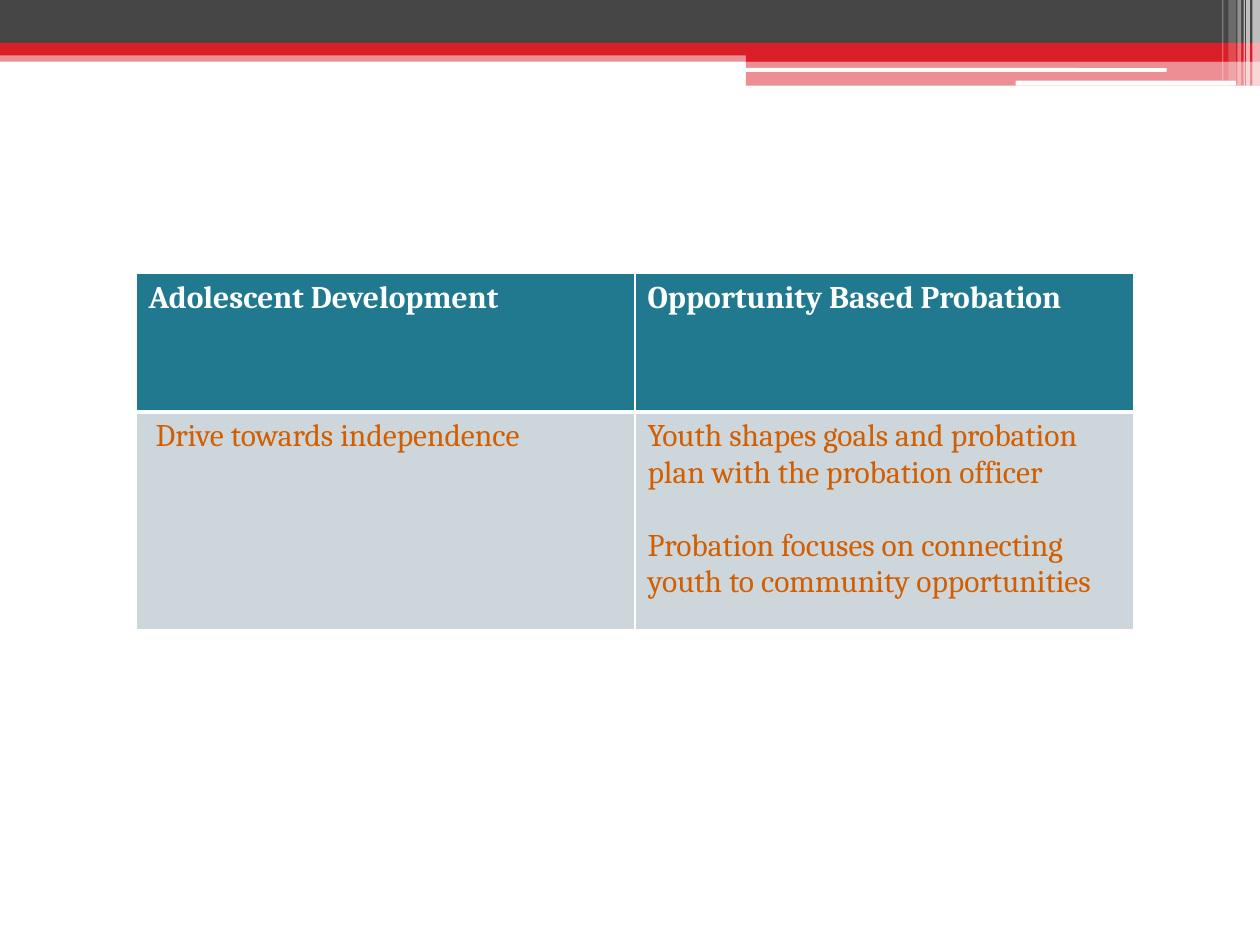
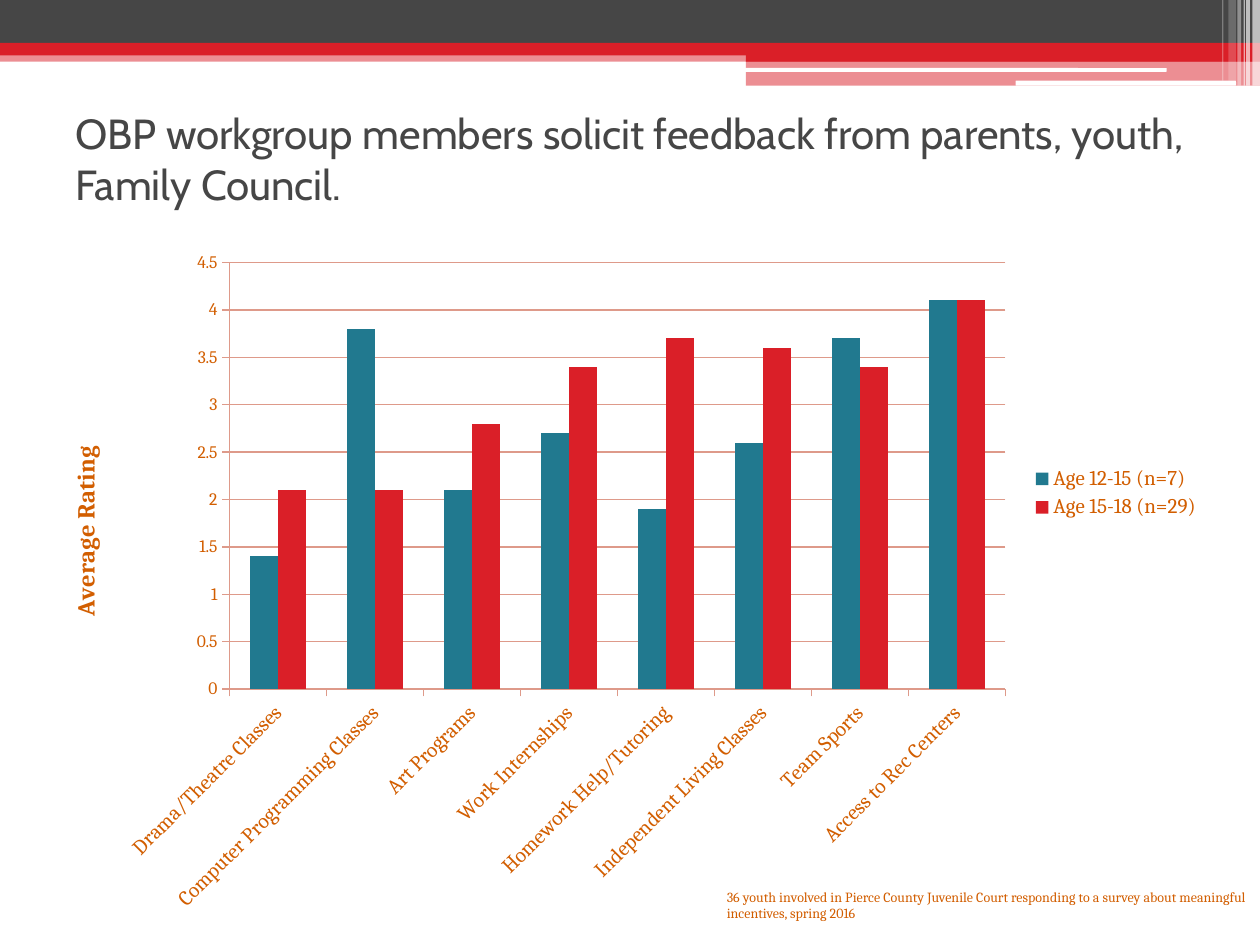
"""Build two probation slides: a comparison table and a survey chart."""
from lxml.etree import SubElement
from pptx import Presentation
from pptx.chart.data import CategoryChartData
from pptx.dml.color import RGBColor
from pptx.enum.chart import XL_CHART_TYPE, XL_LEGEND_POSITION, XL_TICK_MARK
from pptx.enum.shapes import MSO_SHAPE
from pptx.enum.text import MSO_ANCHOR
from pptx.oxml import parse_xml
from pptx.oxml.ns import nsdecls, qn
from pptx.util import Inches, Pt

RED = RGBColor(0xDA, 0x1F, 0x28)
CHARCOAL = RGBColor(0x46, 0x46, 0x46)
WHITE = RGBColor(0xFF, 0xFF, 0xFF)
TEAL = RGBColor(0x21, 0x79, 0x8F)
PALE = RGBColor(0xCD, 0xD7, 0xDB)
ORANGE = RGBColor(0xD2, 0x5E, 0x00)
SALMON = RGBColor(0xDE, 0x9A, 0x8A)

TITLE = {"name": "Cabin", "size": Pt(24), "color": CHARCOAL}
HEADING = {"name": "Cambria", "size": Pt(18), "color": WHITE, "bold": True}
BODY = {"name": "Cambria", "size": Pt(18), "color": ORANGE, "bold": False}
NOTE = {"name": "Cambria", "size": Pt(8), "color": ORANGE}
CHART_TEXT = {"name": "Cambria", "size": Pt(10), "color": ORANGE}
LABEL = CHART_TEXT | {"size": Pt(12)}
AXIS_TITLE = CHART_TEXT | {"size": Pt(14), "bold": True}

BANDS = [
    (0, 0.4, 10, 0.09, RED, 50),
    (0, 0, 10, 0.34, CHARCOAL, 100),
    (0, 0.34, 10, 0.1, RED, 100),
    (5.92, 0.39, 4.08, 0.1, RED, 100),
    (5.92, 0.48, 4.08, 0.2, RED, 50),
    (5.91, 0.54, 3.35, 0.03, WHITE, 100),
    (8.06, 0.64, 1.75, 0.04, WHITE, 100),
    (9.94, 0, 0.06, 0.68, WHITE, 65),
    (9.89, 0, 0.03, 0.68, WHITE, 65),
    (9.87, 0, 0.01, 0.68, WHITE, 60),
    (9.82, 0, 0.03, 0.68, WHITE, 40),
    (9.75, 0, 0.06, 0.64, WHITE, 20),
    (9.7, 0, 0.01, 0.64, WHITE, 30),
]


def apply_format(font, values):
    for attribute, value in values.items():
        if attribute == "color":
            font.color.rgb = value
        else:
            setattr(font, attribute, value)


def place(element, index, **fractions):
    for old in element.findall(qn("c:layout")):
        element.remove(old)
    layout = parse_xml(f"<c:layout {nsdecls('c')}><c:manualLayout/></c:layout>")
    if "h" in fractions:
        SubElement(layout[0], qn("c:layoutTarget"), val="inner")
    for tag in ("xMode", "yMode"):
        SubElement(layout[0], qn(f"c:{tag}"), val="edge")
    for tag, value in fractions.items():
        SubElement(layout[0], qn(f"c:{tag}"), val=str(value))
    element.insert(index, layout)


prs = Presentation()
prs.slide_width, prs.slide_height = Inches(10), Inches(7.5)
comparison, survey = [prs.slides.add_slide(prs.slide_layouts[6]) for _ in range(2)]

for slide in (comparison, survey):
    for left, top, width, height, color, opacity in BANDS:
        rounded = color == WHITE and opacity == 100
        preset = MSO_SHAPE.ROUNDED_RECTANGLE if rounded else MSO_SHAPE.RECTANGLE
        band = slide.shapes.add_shape(
            preset, Inches(left), Inches(top), Inches(width), Inches(height))
        band.shadow.inherit = False
        band.fill.solid()
        band.fill.fore_color.rgb = color
        band.line.fill.background()
        if opacity < 100:
            tint = next(band._element.spPr.iter(qn("a:srgbClr")))
            SubElement(tint, qn("a:alpha"), val=str(opacity * 1000))

rows = [
    (1.1, TEAL, HEADING, 3,
     [["Adolescent Development"], ["Opportunity Based Probation"]]),
    (1.73, PALE, BODY, 1,
     [[" Drive towards independence"],
      ["Youth shapes goals and probation plan with the probation officer",
       "Probation focuses on connecting youth to community opportunities"]]),
]
table = comparison.shapes.add_table(
    2, 2, Inches(1.08), Inches(2.17), Inches(7.92), Inches(2.83)).table
table.horz_banding = False
for row, (height, fill, text_format, bottom, texts) in enumerate(rows):
    table.rows[row].height = Inches(height)
    top = rows[row - 1][3] if row else 1
    for column, paragraphs in enumerate(texts):
        cell = table.cell(row, column)
        cell.fill.solid()
        cell.fill.fore_color.rgb = fill
        edges = {"lnL": 1, "lnR": 1, "lnT": top, "lnB": bottom}
        for position, (edge, weight) in enumerate(edges.items()):
            cell._tc.tcPr.insert(position, parse_xml(
                f'<a:{edge} {nsdecls("a")} w="{Pt(weight)}"><a:solidFill>'
                f'<a:srgbClr val="{WHITE}"/></a:solidFill></a:{edge}>'))
        for number, text in enumerate(paragraphs):
            frame = cell.text_frame
            paragraph = frame.add_paragraph() if number else frame.paragraphs[0]
            paragraph.space_before = Pt(21 * number)
            run = paragraph.add_run()
            run.text = text
            apply_format(run.font, text_format)

ratings = CategoryChartData()
ratings.categories = [
    "Drama/Theatre Classes", "Computer Programming Classes", "Art Programs",
    "Work Internships", "Homework Help/Tutoring", "Independent Living Classes",
    "Team Sports", "Access to Rec Centers"]
ratings.add_series("Age 12-15 (n=7)", [1.4, 3.8, 2.1, 2.7, 1.9, 2.6, 3.7, 4.1])
ratings.add_series("Age 15-18 (n=29)", [2.1, 2.1, 2.8, 3.4, 3.7, 3.6, 3.4, 4.1])
chart = survey.shapes.add_chart(
    XL_CHART_TYPE.COLUMN_CLUSTERED, Inches(0.33), Inches(1.92),
    Inches(9.33), Inches(5.46), ratings).chart
apply_format(chart.font, CHART_TEXT)
chart.has_title = False

plot = chart.plots[0]
plot.gap_width, plot.overlap, plot.vary_by_categories = 150, 0, False
for series, color in zip(plot.series, (TEAL, RED)):
    series.format.fill.solid()
    series.format.fill.fore_color.rgb = color

programs, rating = chart.category_axis, chart.value_axis
for axis in (programs, rating):
    axis.major_tick_mark = XL_TICK_MARK.OUTSIDE
    axis.minor_tick_mark = XL_TICK_MARK.NONE
rating.minimum_scale, rating.maximum_scale, rating.major_unit = 0, 4.5, 0.5
rating.has_major_gridlines = True
for line in (programs.format.line, rating.format.line,
             rating.major_gridlines.format.line):
    line.color.rgb = SALMON
    line.width = Pt(0.75)
apply_format(programs.tick_labels.font, LABEL)
programs._element.find(qn("c:txPr")).find(qn("a:bodyPr")).set("rot", "-2700000")
apply_format(rating.tick_labels.font, CHART_TEXT)
caption = rating.axis_title.text_frame.paragraphs[0].add_run()
caption.text = "Average Rating"
apply_format(caption.font, AXIS_TITLE)

chart.has_legend = True
chart.legend.position = XL_LEGEND_POSITION.RIGHT
chart.legend.include_in_layout = False
apply_format(chart.legend.font, LABEL)
place(chart._chartSpace.chart.plotArea, 0, x=0.16, y=0.03, w=0.66, h=0.62)
place(rating.axis_title._element, 1, x=0.02, y=0.29)
place(chart.legend._element, 1, x=0.84, y=0.32)

captions = [
    (0.5, 0.67, 9, 1.17, TITLE, MSO_ANCHOR.MIDDLE,
     "OBP workgroup members solicit feedback from parents, youth, Family Council."),
    (5.67, 7, 4.67, 0.37, NOTE, MSO_ANCHOR.TOP,
     "36 youth involved in Pierce County Juvenile Court responding to a survey "
     "about meaningful incentives, spring 2016"),
]
for left, top, width, height, text_format, anchor, text in captions:
    frame = survey.shapes.add_textbox(
        Inches(left), Inches(top), Inches(width), Inches(height)).text_frame
    frame.word_wrap = True
    frame.vertical_anchor = anchor
    run = frame.paragraphs[0].add_run()
    run.text = text
    apply_format(run.font, text_format)

prs.save("out.pptx")
